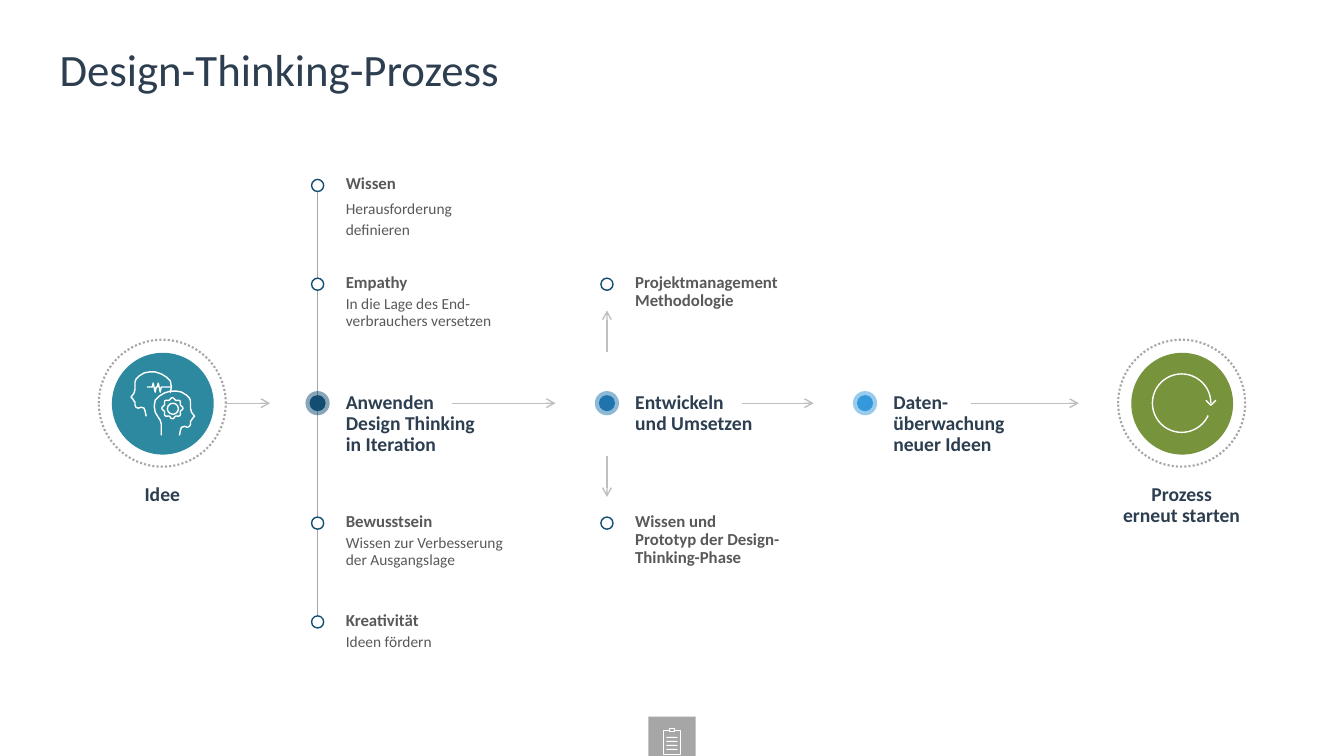
from math import cos, pi, sin

from lxml import etree
from pptx import Presentation
from pptx import util as u
from pptx.dml.color import RGBColor
from pptx.enum import dml, shapes, text
from pptx.oxml.ns import qn

NAVY = RGBColor(0x2C, 0x3E, 0x50)
WHITE = RGBColor(0xFF, 0xFF, 0xFF)
TEAL = RGBColor(0x2D, 0x89, 0x9F)
GREEN = RGBColor(0x77, 0x93, 0x3C)
DARK_BLUE = RGBColor(0x14, 0x4D, 0x73)
MID_BLUE = RGBColor(0x1F, 0x74, 0xAD)
LIGHT_BLUE = RGBColor(0x34, 0x98, 0xDB)
GREY_TEXT = RGBColor(0x59, 0x59, 0x59)
GREY = RGBColor(0xA6, 0xA6, 0xA6)
ARROW_GREY = RGBColor(0xBF, 0xBF, 0xBF)

AXIS = 4.0
IDEA, ITERATE, DEVELOP, MONITOR, RESTART = 1.61, 3.15, 6.02, 8.58, 11.72
ROWS = [1.84, 2.82, 5.19, 6.17]
OVAL = shapes.MSO_SHAPE.OVAL
RECTANGLE = shapes.MSO_SHAPE.RECTANGLE


def draw(parent, kind, box, fill=None, line=None, width=1.0):
    """Add a shape at box (left, top, width, height), in inches."""
    shape = parent.add_shape(kind, *[u.Inches(length) for length in box])
    shape.shadow.inherit = False
    if fill is None:
        shape.fill.background()
    else:
        shape.fill.solid()
        shape.fill.fore_color.rgb = fill
    if line is None:
        shape.line.fill.background()
    else:
        shape.line.color.rgb = line
        shape.line.width = u.Pt(width)
    return shape


def write(shape, lines, color, margins=(0, 0), align=text.PP_ALIGN.LEFT):
    """Fill a shape with (text, size, bold, line spacing, space after) lines."""
    frame = shape.text_frame
    frame.word_wrap = True
    frame.margin_left, frame.margin_right = [u.Inches(m) for m in margins]
    frame.margin_top = frame.margin_bottom = 0
    for index, (words, size, bold, spacing, after) in enumerate(lines):
        para = frame.add_paragraph() if index else frame.paragraphs[0]
        para.text = words
        para.alignment = align
        para.line_spacing = spacing
        para.space_after = u.Pt(after)
        for span in para.runs:
            span.font.name = "Calibri"
            span.font.size = u.Pt(size)
            span.font.bold = bold
            span.font.color.rgb = color
    return frame


deck = Presentation()
deck.slide_width, deck.slide_height = u.Inches(13.33), u.Inches(7.5)
page = deck.slides.add_slide(deck.slide_layouts[5])

title = page.shapes.title
title.left, title.top = u.Inches(0.59), u.Inches(0.47)
title.width, title.height = u.Inches(12.15), u.Inches(0.59)
frame = write(title, [("Design-Thinking-Prozess", 32, False, 0.9, 0)], NAVY)
frame.vertical_anchor = text.MSO_ANCHOR.TOP
frame.auto_size = text.MSO_AUTO_SIZE.NONE

# Stage labels on the main axis
for column, width, height, words in [
    (ITERATE, 1.61, 0.64, "Anwenden\nDesign Thinking\nin Iteration"),
    (DEVELOP, 1.49, 0.42, "Entwickeln\nund Umsetzen"),
    (MONITOR, 1.43, 0.64, "Daten-\nüberwachung\nneuer Ideen"),
]:
    label = draw(page.shapes, RECTANGLE, (column + 0.08, 3.89, width, height), WHITE)
    frame = write(label, [(words, 14, True, 0.9, 10)], NAVY, (0.2, 0.12))
    frame.vertical_anchor = text.MSO_ANCHOR.MIDDLE
    frame.word_wrap = False
    frame.auto_size = text.MSO_AUTO_SIZE.SHAPE_TO_FIT_TEXT

# Branch line and arrows
for *ends, color, has_head in [
    (ITERATE, 1.9, ITERATE, 6.11, GREY, False),
    (2.24, AXIS, 2.68, AXIS, ARROW_GREY, True),
    (4.48, AXIS, 5.51, AXIS, ARROW_GREY, True),
    (7.36, AXIS, 8.07, AXIS, ARROW_GREY, True),
    (9.63, AXIS, 10.7, AXIS, ARROW_GREY, True),
    (DEVELOP, 3.49, DEVELOP, 3.08, ARROW_GREY, True),
    (DEVELOP, 4.52, DEVELOP, 4.93, ARROW_GREY, True),
]:
    arrow = page.shapes.add_connector(
        shapes.MSO_CONNECTOR.STRAIGHT, *[u.Inches(end) for end in ends])
    arrow.line.color.rgb = color
    arrow.line.width = u.Pt(1)
    properties = arrow._element.spPr
    if has_head:
        etree.SubElement(properties.find(qn("a:ln")), qn("a:tailEnd"), type="arrow")
    etree.SubElement(properties, qn("a:effectLst"))

# Stage dots with a half transparent halo
for column, color in [(ITERATE, DARK_BLUE), (DEVELOP, MID_BLUE), (MONITOR, LIGHT_BLUE)]:
    dot = page.shapes.add_group_shape()
    halo = draw(dot.shapes, OVAL, (column - 0.12, AXIS - 0.12, 0.24, 0.24), color)
    tint = halo._element.spPr.find(".//" + qn("a:srgbClr"))
    etree.SubElement(tint, qn("a:alpha"), val="50000")
    draw(dot.shapes, OVAL, (column - 0.08, AXIS - 0.08, 0.16, 0.16), color)

# Branch steps: column, row, heading, detail, detail spacing, space after
for column, row, heading, detail, spacing, after in [
    (ITERATE, ROWS[0], "Wissen", "Herausforderung definieren", 1.1, 6),
    (ITERATE, ROWS[1], "Empathy", "In die Lage des End- verbrauchers versetzen", 0.9, 3),
    (ITERATE, ROWS[2], "Bewusstsein", "Wissen zur Verbesserung\nder Ausgangslage", 0.9, 3),
    (ITERATE, ROWS[3], "Kreativität", "Ideen fördern", 0.9, 3),
    (DEVELOP, ROWS[1], "Projektmanagement\nMethodologie", None, 0.9, 3),
    (DEVELOP, ROWS[2], "Wissen und\nPrototyp der Design-\nThinking-Phase", None, 0.9, 3),
]:
    draw(page.shapes, OVAL, (column - 0.06, row - 0.06, 0.12, 0.12), WHITE, DARK_BLUE)
    lines = [(heading, 12, True, 0.9, 3)]
    if detail:
        lines.append((detail, 11, False, spacing, after))
    step = page.shapes.add_textbox(u.Inches(column + 0.28), u.Inches(row - 0.1),
                                   u.Inches(1.7), u.Inches(0.59 if detail else 0.81))
    write(step, lines, GREY_TEXT)

# Start and end badges
badges = []
for center, color, width, height, words in [
    (IDEA, TEAL, 1.04, 0.22, "Idee"),
    (RESTART, GREEN, 1.67, 0.49, "Prozess\nerneut starten"),
]:
    badge = page.shapes.add_group_shape().shapes
    ring = draw(badge, OVAL, (center - 0.63, AXIS - 0.63, 1.26, 1.26), WHITE, GREY, 1.5)
    ring.line.dash_style = dml.MSO_LINE.ROUND_DOT
    draw(badge, OVAL, (center - 0.5, AXIS - 0.5, 1.01, 1.01), color)
    badges.append(badge)
    caption = page.shapes.add_textbox(u.Inches(center - width / 2), u.Inches(4.81),
                                      u.Inches(width), u.Inches(height))
    write(caption, [(words, 14, True, 0.9, 10)], NAVY, align=text.PP_ALIGN.CENTER)
idea_badge, restart_badge = badges

# Badge icons: two heads facing apart, a gear, a pulse and a restart arrow
gear_x, gear_y = 1.71, 4.05
draw(idea_badge, OVAL, (gear_x - 0.05, gear_y - 0.05, 0.11, 0.11), None, WHITE)
circuit = draw(restart_badge, shapes.MSO_SHAPE.ARC,
               (RESTART - 0.29, AXIS - 0.29, 0.58, 0.58), None, WHITE)
circuit.adjustments[0], circuit.adjustments[1] = 25 * 0.6, 0

front_head = [
    (1.6, 4.32), (1.6, 4.21), (1.59, 4.17), (1.57, 4.14), (1.54, 4.09), (1.53, 4.03),
    (1.54, 3.97), (1.58, 3.93), (1.63, 3.9), (1.69, 3.88), (1.75, 3.88), (1.8, 3.89),
    (1.85, 3.92), (1.88, 3.95), (1.89, 3.98), (1.89, 4.05), (1.9, 4.09), (1.93, 4.13),
    (1.92, 4.14), (1.91, 4.15), (1.9, 4.17), (1.89, 4.18), (1.89, 4.21), (1.88, 4.23),
    (1.86, 4.24), (1.83, 4.23), (1.8, 4.24), (1.79, 4.27), (1.78, 4.32),
]
back_head = [(3.23 - x, y - 0.19) for x, y in front_head[4:]]
gear = []
for step in range(64):
    angle = step * pi / 32
    radius = 0.095 + 0.01 * cos(8 * angle)
    gear.append((gear_x + radius * cos(angle), gear_y + radius * sin(angle)))
pulse = [(1.46, 3.84), (1.51, 3.84), (1.52, 3.8), (1.54, 3.89), (1.55, 3.84),
         (1.56, 3.84), (1.57, 3.8), (1.59, 3.89), (1.6, 3.84), (1.7, 3.84)]
arrow_tip = [(12.06, 3.97), (12.01, 4.02), (11.96, 3.97)]
for badge, points, closed in [
    (idea_badge, front_head, False), (idea_badge, back_head, False),
    (idea_badge, gear, True), (idea_badge, pulse, False),
    (restart_badge, arrow_tip, False),
]:
    corners = [(u.Inches(x), u.Inches(y)) for x, y in points]
    builder = badge.build_freeform(*corners[0])
    builder.add_line_segments(corners[1:], close=closed)
    stroke = builder.convert_to_shape()
    stroke.shadow.inherit = False
    stroke.fill.background()
    stroke.line.color.rgb = WHITE
    stroke.line.width = u.Pt(1)

# Clipboard tab at the bottom edge
tab = page.shapes.add_group_shape().shapes
draw(tab, RECTANGLE, (6.43, 7.11, 0.47, 0.39), GREY)
draw(tab, RECTANGLE, (6.58, 7.25, 0.17, 0.24), None, WHITE, 0.75)
draw(tab, RECTANGLE, (6.64, 7.23, 0.05, 0.03), GREY, WHITE, 0.75)
for row in range(4):
    draw(tab, RECTANGLE, (6.61, 7.31 + row * 0.04, 0.11, 0.01), WHITE)

deck.save("out.pptx")
